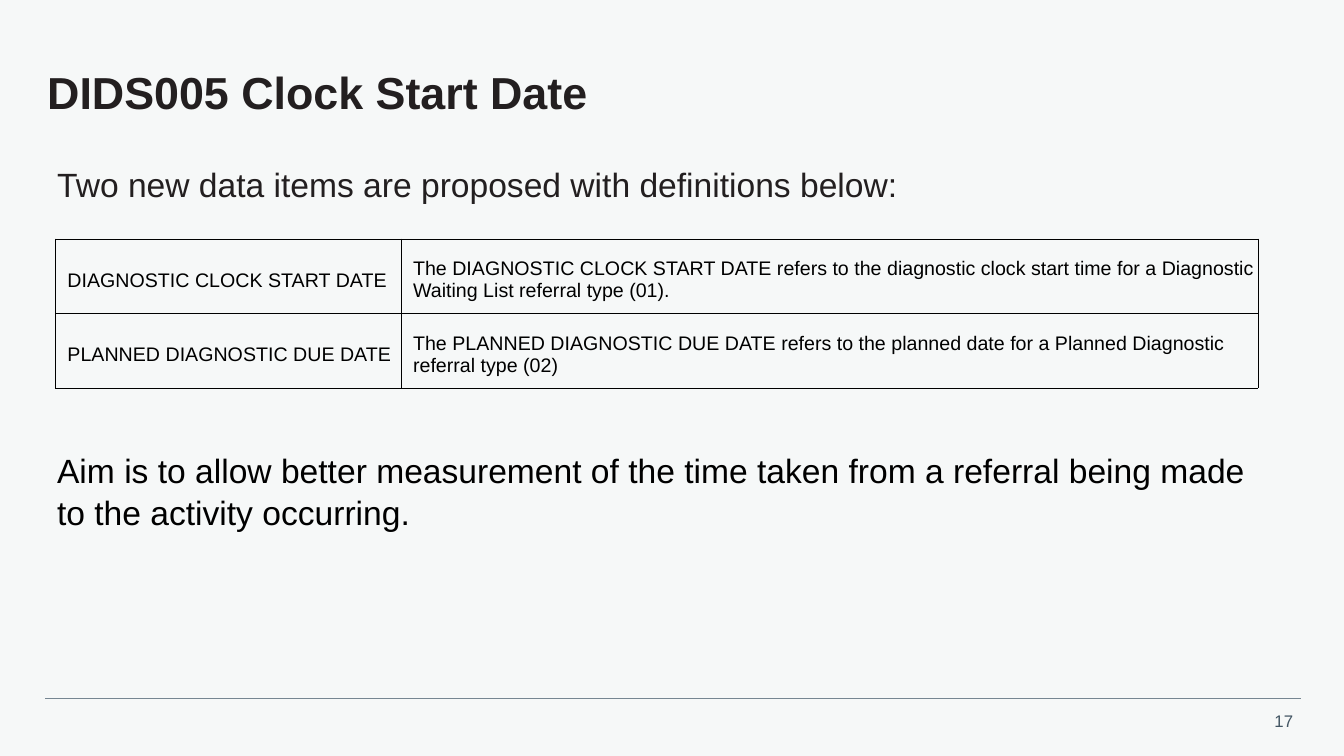
from lxml import etree
from pptx import Presentation
from pptx.dml.color import RGBColor
from pptx.enum.shapes import MSO_CONNECTOR
from pptx.enum.text import MSO_ANCHOR, PP_ALIGN
from pptx.oxml.ns import qn
from pptx.util import Cm, Pt

STRAIGHT = MSO_CONNECTOR.STRAIGHT
MIDDLE = MSO_ANCHOR.MIDDLE
RIGHT = PP_ALIGN.RIGHT

TITLE = "DIDS005 Clock Start Date"
INTRO = "Two new data items are proposed with definitions below:"
AIM = ("Aim is to allow better measurement of the time taken from a referral "
       "being made to the activity occurring.")
DEFINITIONS = [
    ("DIAGNOSTIC CLOCK START DATE",
     "The DIAGNOSTIC CLOCK START DATE refers to the diagnostic clock start time "
     "for a Diagnostic Waiting List referral type (01)."),
    ("PLANNED DIAGNOSTIC DUE DATE",
     "The PLANNED DIAGNOSTIC DUE DATE refers to the planned date "
     "for a Planned Diagnostic referral type (02)"),
]
PAGE = "17"

FONT = "Arial"
BACKGROUND, INK, BLACK = "F6F8F8", "231F20", "000000"
RULE, PAGE_INK = "768692", "425563"

LEFT = 1.19
TABLE_LEFT, TABLE_TOP = 1.4, 6.02
COL_WIDTHS = (8.71, 21.59)
ROW_HEIGHT = 1.88
RULE_LEFT, RULE_RIGHT, RULE_Y = 1.14, 32.79, 17.6
AIM_GAP = 174  # points left free for the table


def rgb(value):
    return RGBColor.from_string(value)


def write(p, text, size, color, bold=False):
    p.text = text
    for r in p.runs:
        r.font.name = FONT
        r.font.size = Pt(size)
        r.font.bold = bold
        r.font.color.rgb = rgb(color)


def add_text_frame(slide, left, top, width, height, wrap=True):
    box = slide.shapes.add_textbox(Cm(left), Cm(top), Cm(width), Cm(height))
    tf = box.text_frame
    tf.word_wrap = wrap
    return tf


def set_borders(cell, color, width):
    """Draw all four borders; they must precede the fill in tcPr."""
    tc_pr = cell._tc.get_or_add_tcPr()
    for i, side in enumerate(("a:lnL", "a:lnR", "a:lnT", "a:lnB")):
        ln = etree.Element(qn(side), w=str(Pt(width)))
        fill = etree.SubElement(ln, qn("a:solidFill"))
        etree.SubElement(fill, qn("a:srgbClr"), val=color)
        tc_pr.insert(i, ln)


def add_definitions(slide):
    n_rows, n_cols = len(DEFINITIONS), len(COL_WIDTHS)
    table = slide.shapes.add_table(
        n_rows, n_cols, Cm(TABLE_LEFT), Cm(TABLE_TOP),
        Cm(sum(COL_WIDTHS)), Cm(ROW_HEIGHT * n_rows)).table
    table.first_row = table.horz_banding = False
    for col, width in zip(table.columns, COL_WIDTHS):
        col.width = Cm(width)
    for i, texts in enumerate(DEFINITIONS):
        table.rows[i].height = Cm(ROW_HEIGHT)
        for j, text in enumerate(texts):
            cell = table.cell(i, j)
            cell.fill.background()
            cell.vertical_anchor = MIDDLE
            cell.margin_left = cell.margin_top = Cm(0.3)
            cell.margin_right, cell.margin_bottom = Cm(0), Cm(0.1)
            write(cell.text_frame.paragraphs[0], text, 14, BLACK)
            set_borders(cell, BLACK, 0.5)


def main():
    prs = Presentation()
    prs.slide_width, prs.slide_height = Cm(33.87), Cm(19.05)
    slide = prs.slides.add_slide(prs.slide_layouts[6])
    slide.background.fill.solid()
    slide.background.fill.fore_color.rgb = rgb(BACKGROUND)

    rule = slide.shapes.add_connector(
        STRAIGHT, Cm(RULE_LEFT), Cm(RULE_Y), Cm(RULE_RIGHT), Cm(RULE_Y))
    rule.line.color.rgb = rgb(RULE)
    rule.line.width = Pt(0.5)
    etree.SubElement(rule._element.spPr, qn("a:effectLst"))

    tf = add_text_frame(slide, 31.8, 17.78, 1.04, 0.77, wrap=False)
    p = tf.paragraphs[0]
    p.alignment = RIGHT
    write(p, PAGE, 12, PAGE_INK)

    tf = add_text_frame(slide, LEFT, 1.19, 31.67, 2.41)
    tf.margin_left = tf.margin_right = tf.margin_top = tf.margin_bottom = 0
    tf.vertical_anchor = MIDDLE
    p = tf.paragraphs[0]
    p.line_spacing = 0.9
    p.space_after = Pt(6)
    write(p, TITLE, 32, INK, bold=True)

    tf = add_text_frame(slide, LEFT, 3.96, 31.27, 9.5)
    intro, aim = tf.paragraphs[0], tf.add_paragraph()
    write(intro, INTRO, 24, INK)
    write(aim, AIM, 24, BLACK)
    intro.line_spacing = aim.line_spacing = 1.05
    aim.space_before = Pt(AIM_GAP)

    add_definitions(slide)
    prs.save("out.pptx")


if __name__ == "__main__":
    main()
